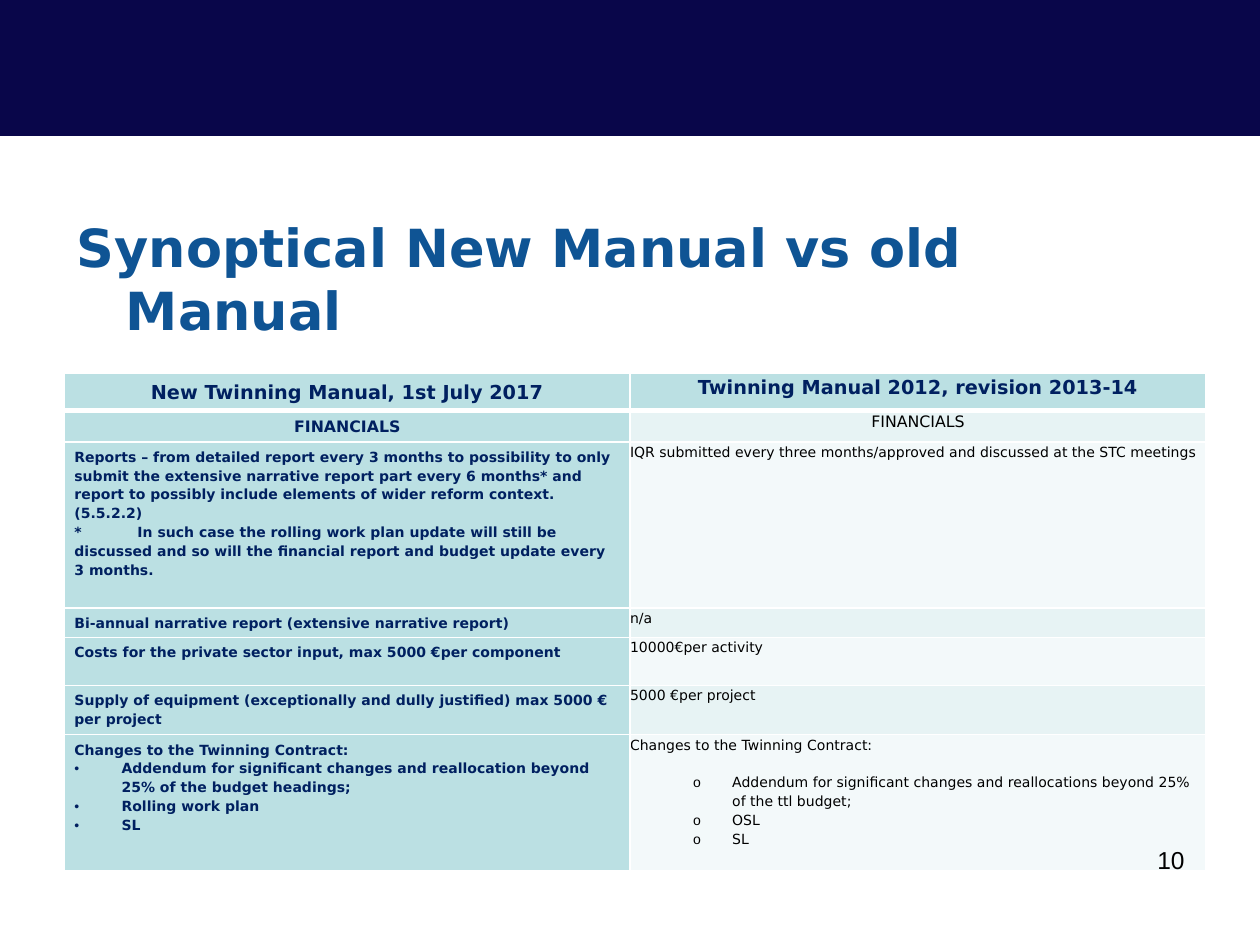
from lxml import etree
from pptx import Presentation
from pptx.dml.color import RGBColor
from pptx.enum.shapes import MSO_SHAPE
from pptx.enum.text import MSO_ANCHOR, PP_ALIGN
from pptx.oxml.ns import qn
from pptx.util import Cm, Pt

RECTANGLE = MSO_SHAPE.RECTANGLE
MIDDLE = MSO_ANCHOR.MIDDLE
LEFT, CENTER, RIGHT = PP_ALIGN.LEFT, PP_ALIGN.CENTER, PP_ALIGN.RIGHT

NAVY, BLUE, DARK_BLUE, BLACK, WHITE = "09064A", "0F5494", "002060", "000000", "FFFFFF"
TEAL, BANDS = "BBE0E3", ("F3F9FA", "E7F3F4")


def color(value):
    return RGBColor.from_string(value)


def style_paragraph(paragraph, size, font_color, bold=False, name="DejaVu Sans"):
    for run in paragraph.runs:
        run.font.name = name
        run.font.size = Pt(size)
        run.font.bold = bold
        run.font.color.rgb = color(font_color)


presentation = Presentation()
presentation.slide_width = Cm(25.4)
presentation.slide_height = Cm(19.05)
slide = presentation.slides.add_slide(presentation.slide_layouts[6])

# Top band
band = slide.shapes.add_shape(RECTANGLE, 0, 0, presentation.slide_width, Cm(2.74))
band.shadow.inherit = False
band.fill.solid()
band.fill.fore_color.rgb = color(NAVY)
band.line.fill.background()

# Title with a hanging indent
title = slide.shapes.add_textbox(Cm(1.3), Cm(4.32), Cm(22.86), Cm(2.59))
title.text_frame.word_wrap = True
title.text_frame.vertical_anchor = MIDDLE
title.text_frame.text = "Synoptical New Manual vs old Manual"
paragraph = title.text_frame.paragraphs[0]
properties = paragraph._p.get_or_add_pPr()
properties.set("marL", str(Cm(0.99)))
properties.set("indent", str(-Cm(0.99)))
style_paragraph(paragraph, 30, BLUE, bold=True)

# Comparison rows: height in cm, new manual, old manual
# A line that starts with a bullet sign is a list item
rows = [
    (0.74, ["New Twinning Manual, 1st July 2017"],
     ["Twinning Manual 2012, revision 2013-14"]),
    (0.63, ["FINANCIALS"], ["FINANCIALS"]),
    (3.35, ["Reports – from detailed report every 3 months to possibility to only "
            "submit the extensive narrative report part every 6 months* and report to "
            "possibly include elements of wider reform context. (5.5.2.2)",
            "*\tIn such case the rolling work plan update will still be discussed and "
            "so will the financial report and budget update every 3 months."],
     ["IQR submitted every three months/approved and discussed at the STC meetings"]),
    (0.58, ["Bi-annual narrative report (extensive narrative report)"], ["n/a"]),
    (0.97, ["Costs for the private sector input, max 5000 €per component"],
     ["10000€per activity"]),
    (0.99, ["Supply of equipment (exceptionally and dully justified) max 5000 € "
            "per project"],
     ["5000 €per project"]),
    (2.74, ["Changes to the Twinning Contract:",
            "• Addendum for significant changes and reallocation beyond 25% of the "
            "budget headings;",
            "• Rolling work plan",
            "• SL"],
     ["Changes to the Twinning Contract:",
      "o Addendum for significant changes and reallocations beyond 25% of the ttl "
      "budget;",
      "o OSL",
      "o SL"]),
]
list_indents = {"• ": (Cm(0.95), Cm(0.95)), "o ": (Cm(2.06), Cm(0.79))}
column_widths = (Cm(11.4), Cm(11.61))
cell_margins = ((Cm(0.2), Cm(0.1)), (0, 0))

table_height = Cm(sum(row[0] for row in rows))
table = slide.shapes.add_table(len(rows), 2, Cm(1.3), Cm(7.53),
                               sum(column_widths), table_height).table
table.first_row = False
table.horz_banding = False
for column, width in zip(table.columns, column_widths):
    column.width = width

for row_index, (height, *cell_texts) in enumerate(rows):
    table.rows[row_index].height = Cm(height)
    is_header = row_index == 0
    size = {0: 11, 1: 9}.get(row_index, 8)
    for column_index, lines in enumerate(cell_texts):
        cell = table.cell(row_index, column_index)
        is_strong = is_header or column_index == 0
        side_margin, edge_margin = cell_margins[column_index]
        cell.margin_left = cell.margin_right = side_margin
        cell.margin_top = cell.margin_bottom = edge_margin

        # White borders, thicker around the header's lower edge
        cell_properties = cell._tc.get_or_add_tcPr()
        for side in ("lnL", "lnR", "lnT", "lnB"):
            thick = (row_index, side) in ((0, "lnB"), (1, "lnT"))
            border = etree.SubElement(cell_properties, qn("a:" + side),
                                      w=str(Pt(3 if thick else 1)))
            border_fill = etree.SubElement(border, qn("a:solidFill"))
            etree.SubElement(border_fill, qn("a:srgbClr"), val=WHITE)
        cell.fill.solid()
        cell.fill.fore_color.rgb = color(TEAL if is_strong else BANDS[row_index % 2])

        # Cell text
        cell.text_frame.text = "\n".join(
            line[2:] if line[:2] in list_indents else line for line in lines)
        for line, paragraph in zip(lines, cell.text_frame.paragraphs):
            paragraph.alignment = CENTER if row_index < 2 else LEFT
            paragraph.line_spacing = 1.15
            if line[:2] in list_indents:
                left, hanging = list_indents[line[:2]]
                properties = paragraph._p.get_or_add_pPr()
                properties.set("marL", str(left))
                properties.set("indent", str(-hanging))
                etree.SubElement(properties, qn("a:buFont"), typeface="Arial")
                etree.SubElement(properties, qn("a:buChar"), char=line[0])
            style_paragraph(paragraph, size, DARK_BLUE if is_strong else BLACK, is_strong)

# Gap above the old manual's list
table.cell(len(rows) - 1, 1).text_frame.paragraphs[0].space_after = Pt(10.8)

# Slide number
number = slide.shapes.add_textbox(Cm(18.21), Cm(16.92), Cm(5.92), Cm(1.32))
number.text_frame.word_wrap = True
number.text_frame.text = "10"
number.text_frame.paragraphs[0].alignment = RIGHT
style_paragraph(number.text_frame.paragraphs[0], 14, BLACK, name="Arial")

presentation.save("out.pptx")
